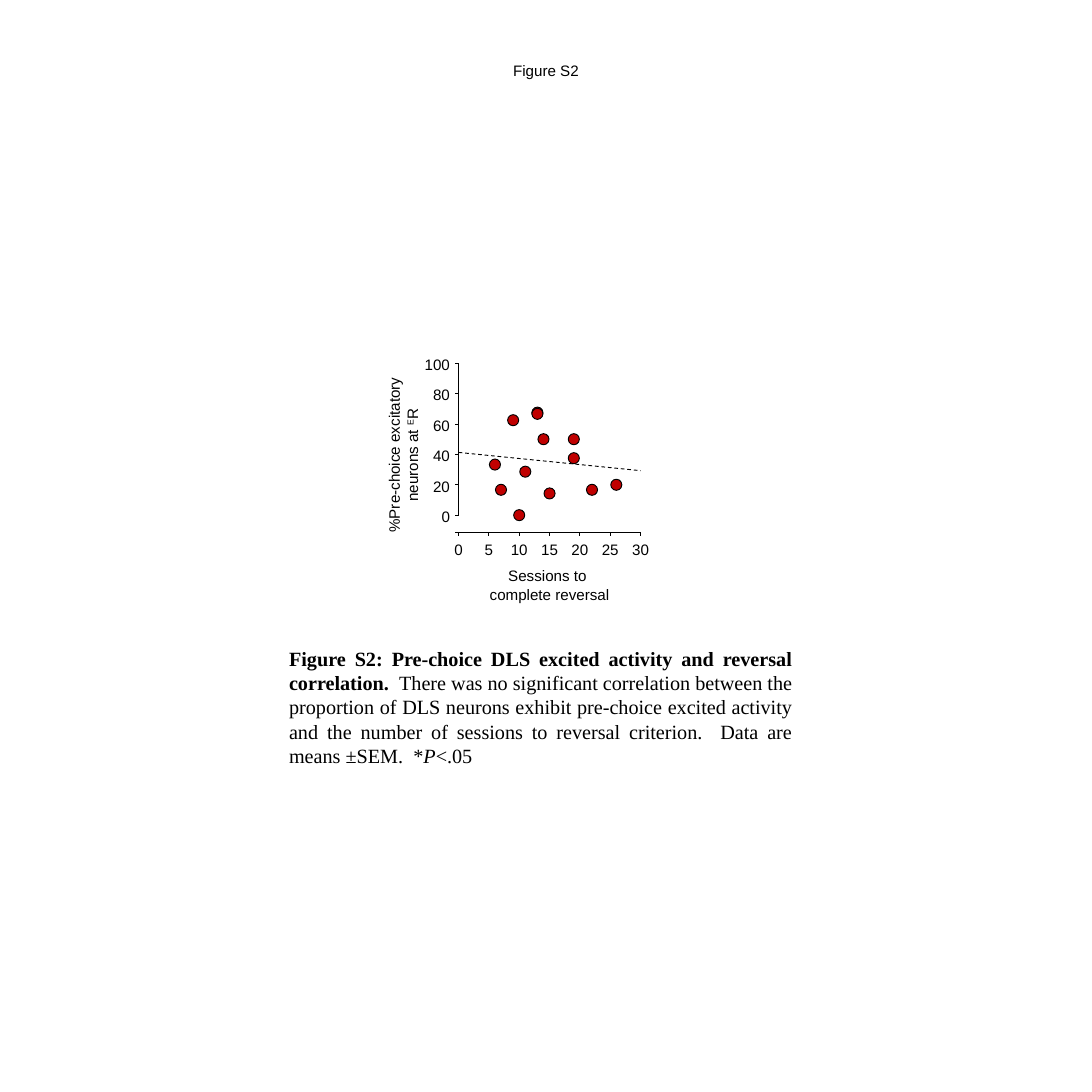
"""Build the Figure S2 slide: a scatter plot with a trend line and a caption."""
from lxml import etree
from pptx import Presentation
from pptx.dml.color import RGBColor
from pptx.enum.dml import MSO_LINE
from pptx.enum.shapes import MSO_CONNECTOR, MSO_SHAPE
from pptx.enum.text import MSO_ANCHOR, MSO_AUTO_SIZE, PP_ALIGN
from pptx.oxml.ns import qn
from pptx.util import Cm, Pt

CENTER, RIGHT, JUSTIFY = PP_ALIGN.CENTER, PP_ALIGN.RIGHT, PP_ALIGN.JUSTIFY
TOP, NO_FIT = MSO_ANCHOR.TOP, MSO_AUTO_SIZE.NONE
STRAIGHT, OVAL, DASH = MSO_CONNECTOR.STRAIGHT, MSO_SHAPE.OVAL, MSO_LINE.DASH

BLACK, RED = "000000", "C00000"
LABEL = {"name": "Arial", "size": Pt(12), "bold": False}
BODY = {"name": "Times New Roman", "size": Pt(16), "bold": False}

TITLE = [[("Figure S2", {})]]
POINTS = [(13, 67.5), (14, 50), (7, 16.7), (13, 66.7), (26, 20), (10, 0), (6, 33.3),
          (11, 28.6), (15, 14.3), (9, 62.5), (19, 50), (19, 37.5), (22, 16.7)]
TREND = [(0, 41.3), (30, 29.3)]
X_TICKS = range(0, 31, 5)
Y_TICKS = range(0, 101, 20)
X_TITLE = [[("Sessions to ", {})], [("complete reversal", {})]]
Y_TITLE = [[("%Pre-choice excitatory neurons at ", {}), ("E", {"baseline": "30000"}), ("R", {})]]
CAPTION = [[
    ("Figure S2: Pre-choice DLS excited activity and reversal correlation.  ", {"bold": True}),
    ("There was no significant correlation between the proportion of DLS neurons exhibit "
     "pre-choice excited activity and the number of sessions to reversal criterion.  "
     "Data are means ±SEM.  *", {}),
    ("P", {"italic": True}),
    ("<.05", {}),
]]

SIDE = 30.48
PLOT_LEFT, PLOT_WIDTH = 12.8, 5.08
PLOT_BOTTOM, PLOT_HEIGHT = 14.38, 4.24
X_AXIS_TOP = 14.86
TICK, MARKER = 0.1, 0.31
LABEL_WIDTH, LABEL_HEIGHT = 1, 0.56


def color(value):
    return RGBColor.from_string(value)


def x_place(value):
    return PLOT_LEFT + PLOT_WIDTH * value / X_TICKS[-1]


def y_place(value):
    return PLOT_BOTTOM - PLOT_HEIGHT * value / Y_TICKS[-1]


def write(shape, paragraphs, align, base=LABEL, inset=True):
    frame = shape.text_frame
    settings = {"word_wrap": True, "auto_size": NO_FIT, "vertical_anchor": TOP}
    if not inset:
        settings.update(dict.fromkeys(
            ("margin_left", "margin_top", "margin_right", "margin_bottom"), 0))
    for name, value in settings.items():
        setattr(frame, name, value)
    for index, runs in enumerate(paragraphs):
        paragraph = frame.add_paragraph() if index else frame.paragraphs[0]
        paragraph.alignment = align
        for text, changes in runs:
            run = paragraph.add_run()
            run.text = text
            run.font.color.rgb = color(BLACK)
            for name, value in {**base, **changes}.items():
                if name == "baseline":
                    run._r.get_or_add_rPr().set(name, value)
                else:
                    setattr(run.font, name, value)


def add_text(slide, box, paragraphs, align, **options):
    shape = slide.shapes.add_textbox(*map(Cm, box))
    write(shape, paragraphs, align, **options)
    return shape


def add_line(slide, *ends):
    connector = slide.shapes.add_connector(STRAIGHT, *map(Cm, ends))
    connector.line.color.rgb = color(BLACK)
    connector.line.width = Pt(0.75)
    etree.SubElement(connector._element.spPr, qn("a:effectLst"))
    return connector


def add_axes(slide):
    add_line(slide, PLOT_LEFT, PLOT_BOTTOM, PLOT_LEFT, y_place(Y_TICKS[-1]))
    add_line(slide, PLOT_LEFT - TICK, X_AXIS_TOP, x_place(X_TICKS[-1]), X_AXIS_TOP)
    for value in Y_TICKS:
        y = y_place(value)
        add_line(slide, PLOT_LEFT, y, PLOT_LEFT - TICK, y)
        box = (PLOT_LEFT - 0.24 - LABEL_WIDTH, y - 0.22, LABEL_WIDTH, LABEL_HEIGHT)
        add_text(slide, box, [[(str(value), {})]], RIGHT, inset=False)
    for value in X_TICKS:
        x = x_place(value)
        add_line(slide, x, X_AXIS_TOP, x, X_AXIS_TOP + TICK)
        box = (x - LABEL_WIDTH / 2, X_AXIS_TOP + 0.23, LABEL_WIDTH, LABEL_HEIGHT)
        add_text(slide, box, [[(str(value), {})]], CENTER, inset=False)


def add_data(slide):
    (x1, y1), (x2, y2) = TREND
    trend = add_line(slide, x_place(x1), y_place(y1), x_place(x2), y_place(y2))
    trend.line.dash_style = DASH
    for x, y in POINTS:
        box = (x_place(x) - MARKER / 2, y_place(y) - MARKER / 2, MARKER, MARKER)
        marker = slide.shapes.add_shape(OVAL, *map(Cm, box))
        marker.shadow.inherit = False
        marker.fill.solid()
        marker.fill.fore_color.rgb = color(RED)
        marker.line.color.rgb = color(BLACK)
        marker.line.width = Pt(0.75)


def main():
    presentation = Presentation()
    presentation.slide_width = presentation.slide_height = Cm(SIDE)
    slide = presentation.slides.add_slide(presentation.slide_layouts[5])
    title = slide.shapes.title
    place = {"left": 0, "top": 1.7, "width": SIDE, "height": 0.51}
    for name, value in place.items():
        setattr(title, name, Cm(value))
    write(title, TITLE, CENTER, inset=False)
    add_axes(slide)
    add_data(slide)
    y_title = add_text(slide, (8.71, 12.19, 5.08, 1.02), Y_TITLE, CENTER, inset=False)
    y_title.rotation = 270
    add_text(slide, (13.34, 15.82, 4, 1.02), X_TITLE, CENTER, inset=False)
    add_text(slide, (7.82, 17.91, 14.55, 3.68), CAPTION, JUSTIFY, base=BODY)
    presentation.save("out.pptx")


if __name__ == "__main__":
    main()
